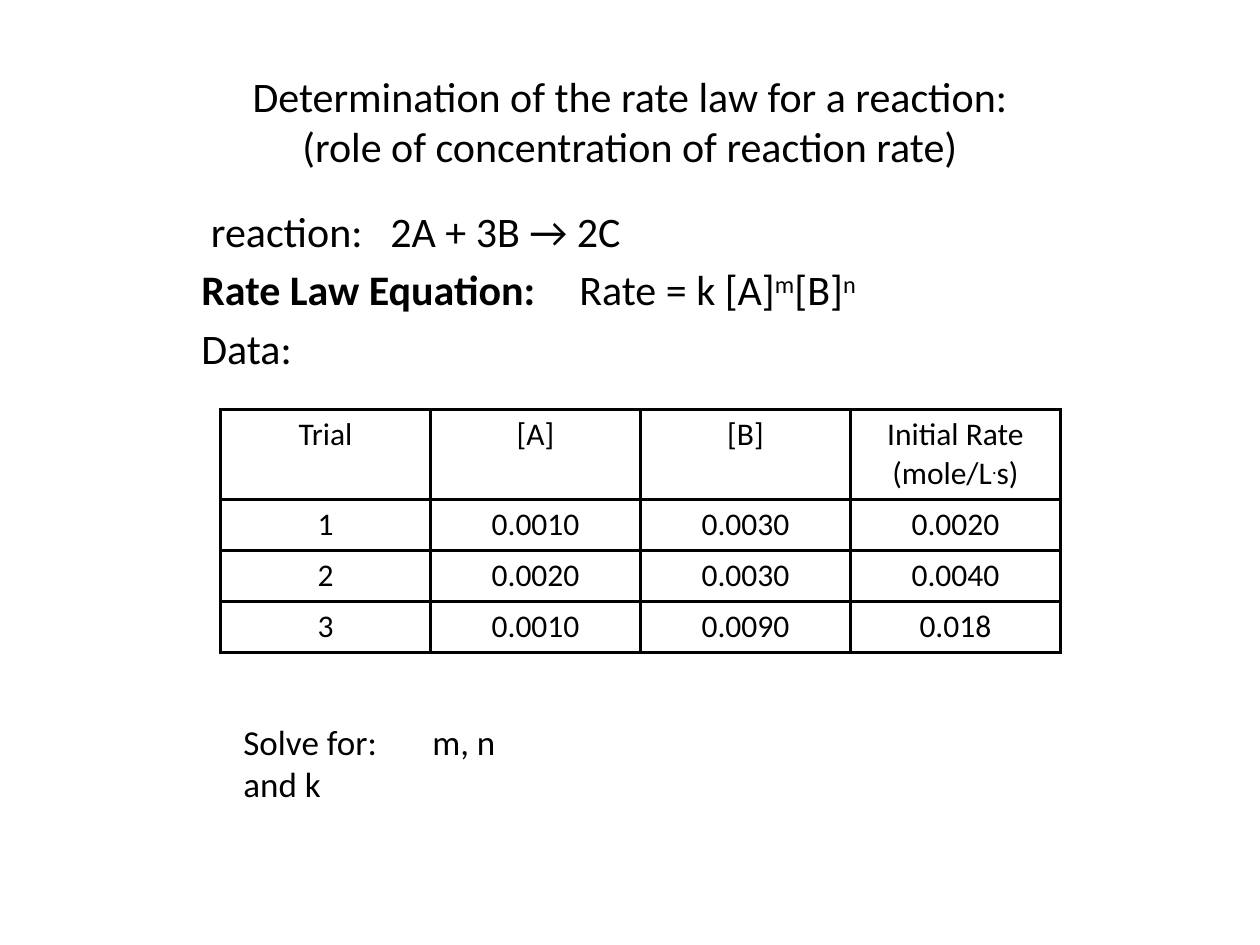
from lxml import etree
from pptx import Presentation
from pptx.dml import color
from pptx.enum import text as t
from pptx.oxml import ns
from pptx.util import Pt

INK = {"text": "000000", "line": "000000", "page": "FFFFFF"}
FONT = "Calibri"
DATA = [
    ["1", "0.0010", "0.0030", "0.0020"],
    ["2", "0.0020", "0.0030", "0.0040"],
    ["3", "0.0010", "0.0090", "0.018"],
]


def rgb(name):
    return color.RGBColor.from_string(INK[name])


def write(para, words, size=24, bold=False, sup=False, align=None):
    run = para.add_run()
    run.text = words
    run.font.size = Pt(size)
    run.font.name = FONT
    run.font.bold = bold
    run.font.color.rgb = rgb("text")
    if sup:
        run._r.get_or_add_rPr().set("baseline", "30000")
    if align is not None:
        para.alignment = align


def add_box(slide, left, top, width, height, anchor, wrap=True):
    shape = slide.shapes.add_textbox(Pt(left), Pt(top), Pt(width), Pt(height))
    frame = shape.text_frame
    frame.word_wrap = wrap
    frame.vertical_anchor = anchor
    return frame


def set_tab(para, stop, indent=0):
    props = para._p.get_or_add_pPr()
    props.set("marL", "0")
    props.set("indent", str(Pt(indent)))
    tabs = etree.SubElement(props, ns.qn("a:tabLst"))
    etree.SubElement(tabs, ns.qn("a:tab"), pos=str(Pt(stop)), algn="l")


def add_edges(cell, width=2.25):
    props = cell._tc.get_or_add_tcPr()
    for spot, side in enumerate(("lnL", "lnR", "lnT", "lnB")):
        line = etree.Element(ns.qn("a:" + side), w=str(Pt(width)))
        fill = etree.SubElement(line, ns.qn("a:solidFill"))
        etree.SubElement(fill, ns.qn("a:srgbClr"), val=INK["line"])
        props.insert(spot, line)


def add_title(slide):
    frame = add_box(slide, 54, 36, 612, 66, t.MSO_ANCHOR.MIDDLE)
    para = frame.paragraphs[0]
    write(para, "Determination of the rate law for a reaction:",
          align=t.PP_ALIGN.CENTER)
    para.add_line_break()
    write(para, "(role of concentration of reaction rate)")


def add_body(slide):
    frame = add_box(slide, 108, 114, 504, 330, t.MSO_ANCHOR.TOP)
    first, law, data = frame.paragraphs[0], frame.add_paragraph(), frame.add_paragraph()
    for para in (first, law, data):
        para.space_before = Pt(4.5)
    set_tab(first, 119.5, indent=5.5)
    write(first, "reaction:\t2A + 3B → 2C")
    set_tab(law, 207.5)
    write(law, "Rate Law Equation:\t", bold=True)
    write(law, "Rate = k [A]")
    write(law, "m", sup=True)
    write(law, "[B]")
    write(law, "n", sup=True)
    write(data, "Data:")


def add_grid(slide):
    rows = [["Trial", "[A]", "[B]", ""]] + DATA
    heights = [51.4] + [29.2] * len(DATA)
    frame = slide.shapes.add_table(
        len(rows), 4, Pt(126), Pt(234), Pt(480), Pt(sum(heights)))
    grid = frame.table
    grid.first_row = grid.horz_banding = False
    for r, row in enumerate(rows):
        grid.rows[r].height = Pt(heights[r])
        for c, words in enumerate(row):
            cell = grid.cell(r, c)
            cell.fill.solid()
            cell.fill.fore_color.rgb = rgb("page")
            add_edges(cell)
            if words:
                write(cell.text_frame.paragraphs[0], words, size=18,
                      align=t.PP_ALIGN.CENTER)
    head = grid.cell(0, 3).text_frame.paragraphs[0]
    write(head, "Initial Rate (mole/L", size=18, align=t.PP_ALIGN.CENTER)
    write(head, ".", size=18, sup=True)
    write(head, "s)", size=18)


def add_task(slide):
    frame = add_box(slide, 132, 408, 191, 55.5, t.MSO_ANCHOR.BOTTOM, wrap=False)
    para = frame.paragraphs[0]
    set_tab(para, 90)
    write(para, "Solve for:\tm, n and k", size=20, align=t.PP_ALIGN.LEFT)


def main():
    deck = Presentation()
    deck.slide_width, deck.slide_height = Pt(720), Pt(540)
    slide = deck.slides.add_slide(deck.slide_layouts[6])
    add_title(slide)
    add_body(slide)
    add_grid(slide)
    add_task(slide)
    deck.save("out.pptx")


if __name__ == "__main__":
    main()
